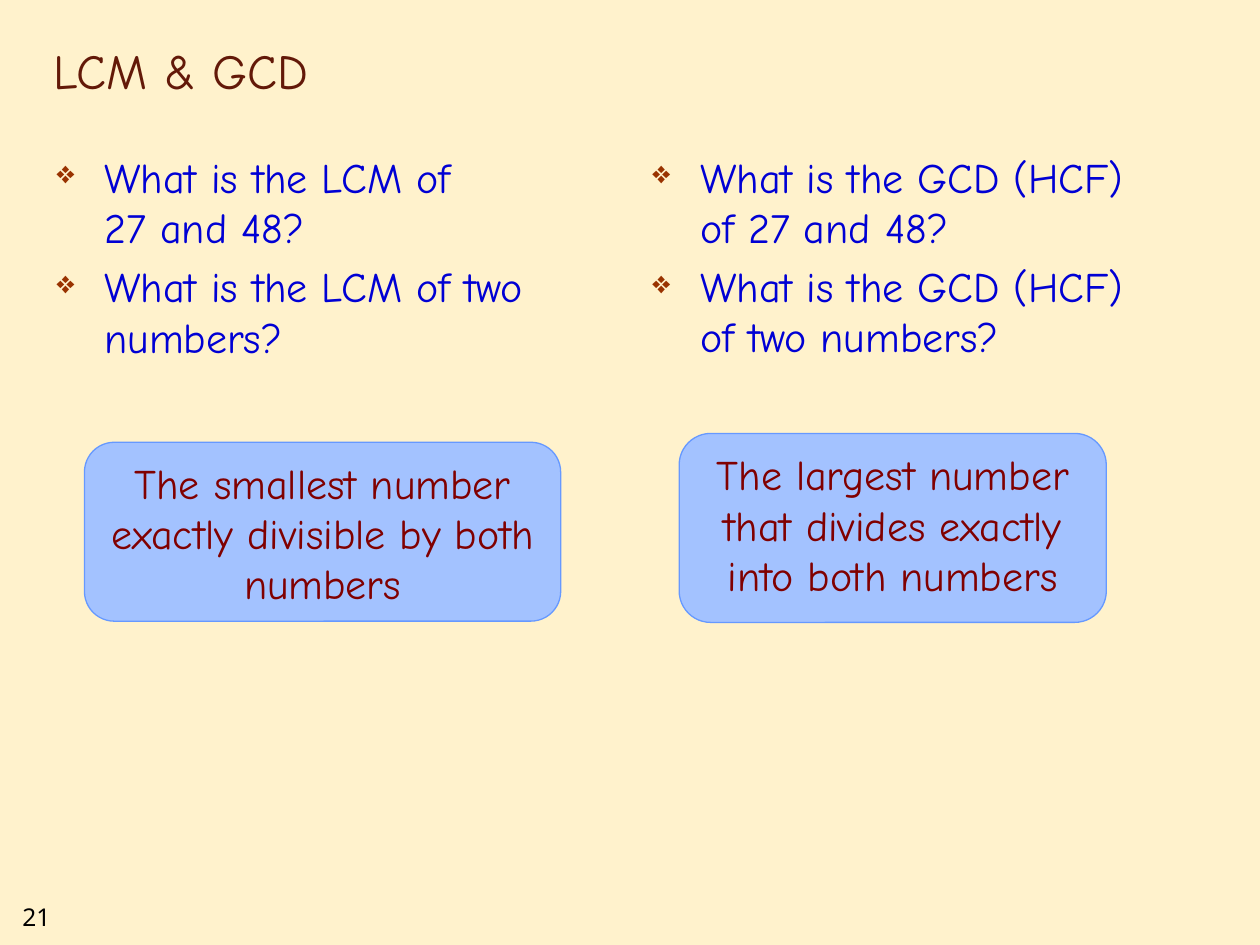
import pptx
import pptx.util
import pptx.dml.color
import pptx.enum.shapes
import pptx.enum.text
import pptx.oxml
import pptx.oxml.ns

Inches, Pt = pptx.util.Inches, pptx.util.Pt
RGBColor = pptx.dml.color.RGBColor
ANCHOR = pptx.enum.text.MSO_ANCHOR

CREAM = RGBColor(0xFF, 0xF2, 0xCC)
BROWN = RGBColor(0x63, 0x19, 0x08)
BLUE = RGBColor(0x00, 0x00, 0xD4)
MAROON = RGBColor(0x80, 0x00, 0x00)
BOX_FILL = RGBColor(0xA3, 0xC2, 0xFF)
BOX_LINE = RGBColor(0x66, 0x99, 0xFF)
RUST = RGBColor(0x99, 0x33, 0x00)
BLACK = RGBColor(0x00, 0x00, 0x00)
HAND_FONT = "Comic Neue"


def format_runs(p, size, color, font=HAND_FONT):
    for r in p.runs:
        r.font.size = Pt(size)
        r.font.name = font
        r.font.color.rgb = color


def add_text(slide, box, paragraphs, size, color, font=HAND_FONT, anchor=ANCHOR.TOP):
    tf = slide.shapes.add_textbox(*map(Inches, box)).text_frame
    tf.word_wrap = True
    tf.vertical_anchor = anchor
    tf.text = "\n".join(paragraphs)
    for p in tf.paragraphs:
        format_runs(p, size, color, font)
    return tf


def add_bullet(p):
    pPr = p._p.get_or_add_pPr()
    pPr.set("marL", str(Inches(0.38)))
    pPr.set("indent", str(Inches(-0.38)))
    ns = pptx.oxml.ns.nsdecls("a")
    for xml in (
        f'<a:buClr {ns}><a:srgbClr val="{RUST}"/></a:buClr>',
        f'<a:buSzPct {ns} val="75000"/>',
        f'<a:buChar {ns} char="❖"/>',
    ):
        pPr.append(pptx.oxml.parse_xml(xml))


def add_questions(slide, box, questions):
    tf = add_text(slide, box, questions, 24, BLUE)
    for p in tf.paragraphs:
        add_bullet(p)
    for p in tf.paragraphs[1:]:
        p.space_before = Pt(5)


def add_answer(slide, box, text):
    s = slide.shapes.add_shape(
        pptx.enum.shapes.MSO_SHAPE.ROUNDED_RECTANGLE, *map(Inches, box))
    s.shadow.inherit = False
    s.fill.solid()
    s.fill.fore_color.rgb = BOX_FILL
    s.line.color.rgb = BOX_LINE
    s.line.width = Pt(0.75)
    tf = s.text_frame
    tf.word_wrap = True
    tf.vertical_anchor = ANCHOR.TOP
    tf.text = text
    p = tf.paragraphs[0]
    p.alignment = pptx.enum.text.PP_ALIGN.CENTER
    format_runs(p, 24, MAROON)


def main():
    prs = pptx.Presentation()
    prs.slide_width, prs.slide_height = Inches(10), Inches(7.5)
    slide = prs.slides.add_slide(prs.slide_layouts[6])
    slide.background.fill.solid()
    slide.background.fill.fore_color.rgb = CREAM

    # Slide number and title
    add_text(slide, (0.08, 7.11, 0.75, 0.34), ["21"], 14, BLACK, "Noto Sans")
    add_text(slide, (0.33, 0.17, 8.5, 0.67), ["LCM & GCD"], 28, BROWN,
             anchor=ANCHOR.BOTTOM)

    # Questions, one column per topic
    add_questions(slide, (0.35, 1.15, 4.25, 2.05),
                  ["What is the LCM of \v27 and 48?",
                   "What is the LCM of two numbers?"])
    add_questions(slide, (5.08, 1.15, 4.25, 2.13),
                  ["What is the GCD (HCF) of 27 and 48?",
                   "What is the GCD (HCF) of two numbers?"])

    # Definitions
    add_answer(slide, (0.67, 3.51, 3.78, 1.42),
               "The smallest number exactly divisible by both numbers")
    add_answer(slide, (5.39, 3.44, 3.39, 1.5),
               "The largest number that divides exactly into both numbers")

    prs.save("out.pptx")


if __name__ == "__main__":
    main()
